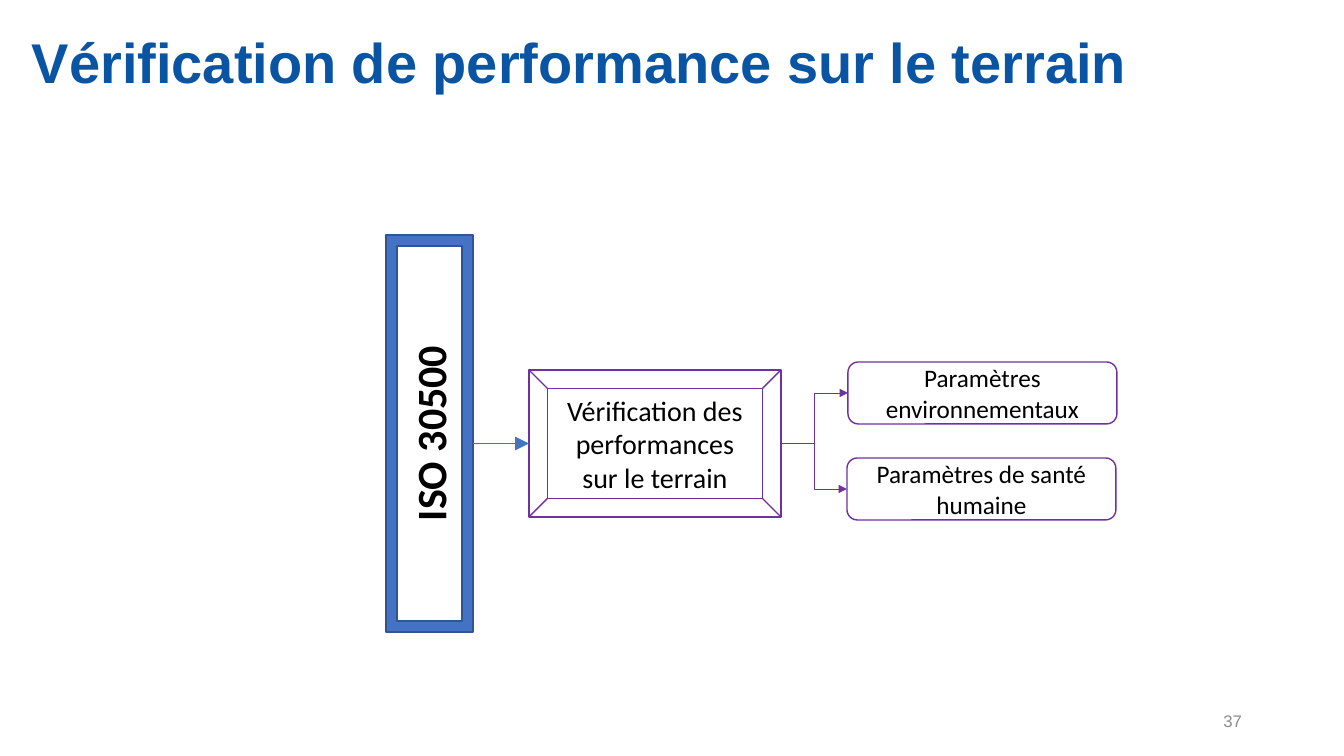
import pptx
import pptx.util
import pptx.dml.color
import pptx.enum.shapes
import pptx.enum.text
import pptx.oxml
import pptx.oxml.ns

RGB = pptx.dml.color.RGBColor
KIND = pptx.enum.shapes.MSO_SHAPE
LINK = pptx.enum.shapes.MSO_CONNECTOR
ALIGN = pptx.enum.text.PP_ALIGN
MIDDLE = pptx.enum.text.MSO_ANCHOR.MIDDLE

NAVY = RGB(0x0A, 0x55, 0xA3)
BLUE = RGB(0x44, 0x72, 0xC4)
EDGE = RGB(0x32, 0x54, 0x91)
PURPLE = RGB(0x70, 0x30, 0xA0)
BLACK = RGB(0, 0, 0)
GREY = RGB(0x8C, 0x8C, 0x8C)

TITLE = "Vérification de performance sur le terrain"
PAGE = "37"
# kind, (left, top, width, height) in px, text, size, bold, fill, line
NORM = (KIND.FRAME, (386, 235, 87, 397), "ISO 30500", 30, True, BLUE, EDGE)
CHECK = (KIND.BEVEL, (529, 370, 252, 147),
         "Vérification des performances sur le terrain", 20, False, None, PURPLE)
PARAMS = [
    (KIND.ROUNDED_RECTANGLE, (848, 362, 269, 62),
     "Paramètres environnementaux", 18, False, None, PURPLE),
    (KIND.ROUNDED_RECTANGLE, (847, 458, 269, 62),
     "Paramètres de santé humaine", 18, False, None, PURPLE),
]


def px(count):
    return round(count * 914400 / 100.8)


def write(frame, text, size, font, color, bold=False, align=ALIGN.CENTER):
    frame.word_wrap = True
    frame.vertical_anchor = MIDDLE
    para = frame.paragraphs[0]
    para.alignment = align
    run = para.add_run()
    run.text = text
    run.font.size = pptx.util.Pt(size)
    run.font.name = font
    run.font.bold = bold
    run.font.color.rgb = color
    return para


def add_box(slide, kind, place, text, size, bold, fill, line):
    box = slide.shapes.add_shape(kind, *map(px, place))
    box.shadow.inherit = False
    if fill is None:
        box.fill.background()
    else:
        box.fill.solid()
        box.fill.fore_color.rgb = fill
    box.line.color.rgb = line
    box.line.width = pptx.util.Pt(1)
    write(box.text_frame, text, size, "Calibri", BLACK, bold)
    return box


def add_arrow(slide, kind, start, end, color, head):
    arrow = slide.shapes.add_connector(kind, *map(px, start + end))
    arrow.line.color.rgb = color
    arrow.line.width = pptx.util.Pt(0.5)
    tip = pptx.oxml.parse_xml(
        f'<a:tailEnd {pptx.oxml.ns.nsdecls("a")} type="triangle" w="{head}" len="{head}"/>')
    arrow.line._get_or_add_ln().append(tip)
    arrow._element.spPr.append(
        pptx.oxml.parse_xml(f'<a:effectLst {pptx.oxml.ns.nsdecls("a")}/>'))


def right(place):
    return place[0] + place[2]


def center(place):
    return place[1] + place[3] / 2


def main():
    deck = pptx.Presentation()
    deck.slide_width = px(1344)
    deck.slide_height = px(756)
    slide = deck.slides.add_slide(deck.slide_layouts[5])

    title = slide.shapes.title
    title.left, title.top, title.width, title.height = map(px, (32, 15, 1234, 100))
    frame = title.text_frame
    frame.margin_left = frame.margin_right = frame.margin_top = frame.margin_bottom = 0
    write(frame, TITLE, 40, "Arial", NAVY, True, ALIGN.LEFT).line_spacing = 0.9

    add_box(slide, *CHECK)
    norm = add_box(slide, *NORM)
    norm.text_frame._txBody.bodyPr.set("vert", "vert270")

    mid = center(CHECK[1])
    add_arrow(slide, LINK.STRAIGHT, (right(NORM[1]), mid), (CHECK[1][0], mid), BLUE, "lg")
    for param in PARAMS:
        place = param[1]
        add_arrow(slide, LINK.ELBOW, (right(CHECK[1]), mid),
                  (place[0], center(place)), PURPLE, "med")
        add_box(slide, *param)

    page = slide.shapes.add_textbox(*map(px, (950, 701, 302, 40)))
    write(page.text_frame, PAGE, 12, "Arial", GREY, align=ALIGN.RIGHT)
    deck.save("out.pptx")


if __name__ == "__main__":
    main()
